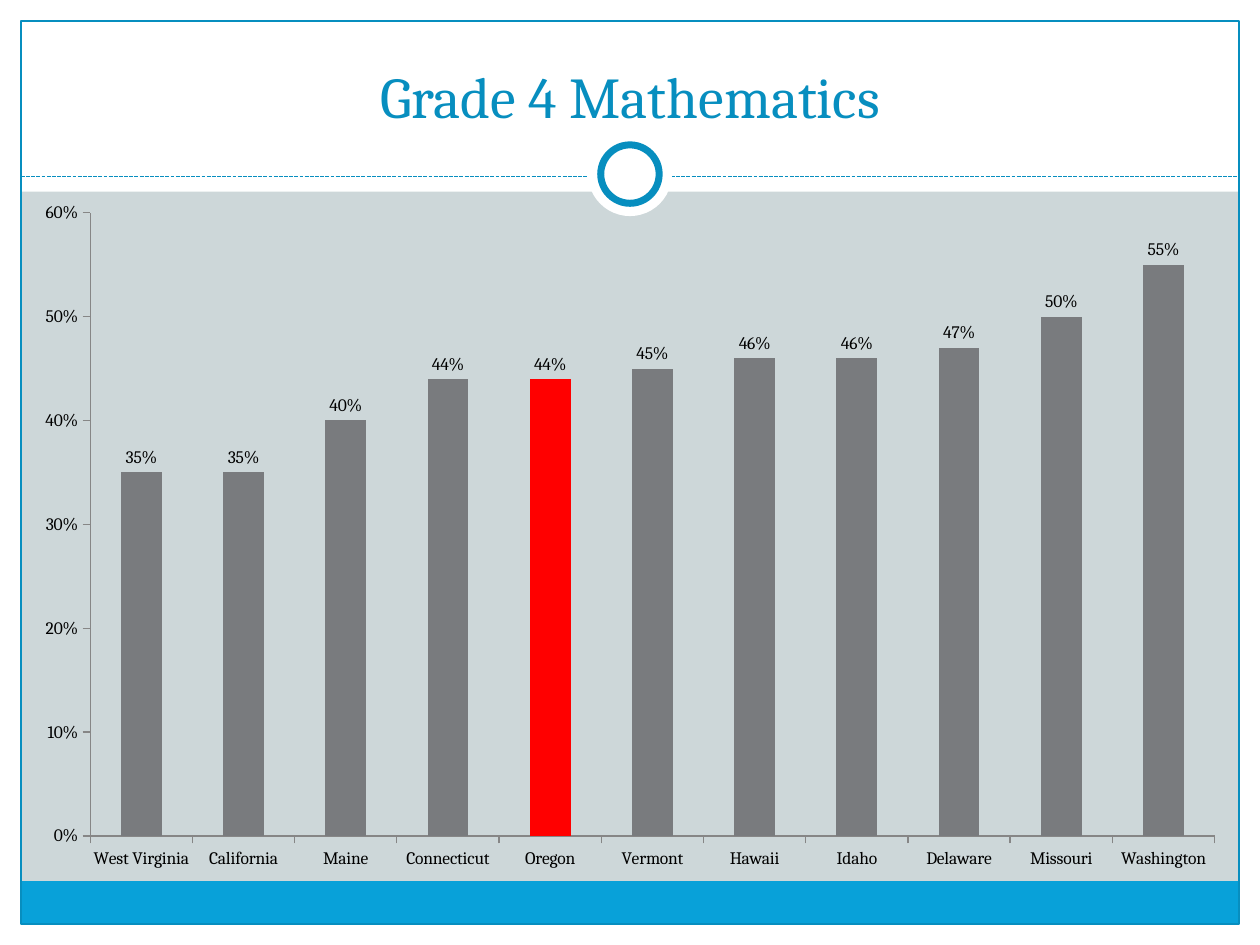
import dataclasses

import lxml.etree
import pptx
import pptx.chart.data
import pptx.dml.color
import pptx.enum.chart
import pptx.enum.dml
import pptx.enum.shapes
import pptx.enum.text
import pptx.oxml.ns
import pptx.util

Pt = pptx.util.Pt
RGB = pptx.dml.color.RGBColor.from_string
qn = pptx.oxml.ns.qn
SHAPE = pptx.enum.shapes.MSO_SHAPE


@dataclasses.dataclass(frozen=True)
class Theme:
    background = RGB("CDD7D9")
    white = RGB("FFFFFF")
    accent = RGB("078EBF")
    footer = RGB("08A1D9")
    bar = RGB("797B7E")
    highlight = RGB("FF0000")
    axis = RGB("868686")
    text = RGB("000000")
    font = "Cambria"
    title_size = Pt(33)
    chart_size = Pt(10)


theme = Theme()
WIDTH, HEIGHT, MARGIN = 720, 540, 12

presentation = pptx.Presentation()
presentation.slide_width = Pt(WIDTH)
presentation.slide_height = Pt(HEIGHT)
slide = presentation.slides.add_slide(presentation.slide_layouts[5])
slide.background.fill.solid()
slide.background.fill.fore_color.rgb = theme.background


def add_shape(kind, left, top, width, height, fill=None, line_width=None):
    shape = slide.shapes.add_shape(kind, Pt(left), Pt(top), Pt(width), Pt(height))
    shape.shadow.inherit = False
    if fill is None:
        shape.fill.background()
    else:
        shape.fill.solid()
        shape.fill.fore_color.rgb = fill
    if line_width is None:
        shape.line.fill.background()
    else:
        shape.line.color.rgb = theme.accent
        shape.line.width = Pt(line_width)
    return shape


# White margins and header, footer bar, frame
for left, top, width, height in (
    (0, HEIGHT - MARGIN, WIDTH, MARGIN),
    (0, 0, WIDTH, 109.5),
    (0, 0, MARGIN, HEIGHT),
    (WIDTH - MARGIN, 0, MARGIN, HEIGHT),
):
    add_shape(SHAPE.RECTANGLE, left, top, width, height, theme.white)
inner_width = WIDTH - 2 * MARGIN
add_shape(SHAPE.RECTANGLE, MARGIN, 503.5, inner_width, 24.5, theme.footer)
add_shape(SHAPE.RECTANGLE, MARGIN, MARGIN, inner_width, HEIGHT - 2 * MARGIN, line_width=0.75)

# Dashed divider
divider = slide.shapes.add_connector(
    pptx.enum.shapes.MSO_CONNECTOR.STRAIGHT,
    Pt(MARGIN), Pt(100.8), Pt(WIDTH - MARGIN), Pt(100.8),
)
divider.line.color.rgb = theme.accent
divider.line.width = Pt(0.75)
divider.line.dash_style = pptx.enum.dml.MSO_LINE.SQUARE_DOT
lxml.etree.SubElement(divider._element.spPr, qn("a:effectLst"))

# Ring centred on the divider
for diameter, line_width in ((48, None), (33.4, 4)):
    add_shape(SHAPE.OVAL, (WIDTH - diameter) / 2, 99.5 - diameter / 2,
              diameter, diameter, theme.white, line_width)

# Title, brought in front of the header band
title = slide.shapes.title
title.left, title.top, title.width, title.height = Pt(24), Pt(18), Pt(672), Pt(60)
slide.shapes._spTree.append(title._element)
title.text_frame.text = "Grade 4 Mathematics"
title.text_frame.vertical_anchor = pptx.enum.text.MSO_ANCHOR.BOTTOM
title.text_frame.auto_size = pptx.enum.text.MSO_AUTO_SIZE.NONE
paragraph = title.text_frame.paragraphs[0]
paragraph.alignment = pptx.enum.text.PP_ALIGN.CENTER
run = paragraph.runs[0]
run.font.name = theme.font
run.font.size = theme.title_size
run.font.color.rgb = theme.accent

# Column chart by state
results = {
    "West Virginia": 0.35, "California": 0.35, "Maine": 0.40, "Connecticut": 0.44,
    "Oregon": 0.44, "Vermont": 0.45, "Hawaii": 0.46, "Idaho": 0.46,
    "Delaware": 0.47, "Missouri": 0.50, "Washington": 0.55,
}
chart_data = pptx.chart.data.CategoryChartData()
chart_data.categories = list(results)
chart_data.add_series("Series 1", list(results.values()))
chart = slide.shapes.add_chart(
    pptx.enum.chart.XL_CHART_TYPE.COLUMN_CLUSTERED,
    Pt(MARGIN), Pt(108), Pt(inner_width), Pt(396), chart_data,
).chart
chart.has_legend = False
chart.has_title = False
chart.font.name = theme.font
chart.font.size = theme.chart_size
chart.font.color.rgb = theme.text

# Axes
for axis in (chart.category_axis, chart.value_axis):
    axis.has_major_gridlines = False
    axis.major_tick_mark = pptx.enum.chart.XL_TICK_MARK.OUTSIDE
    axis.format.line.color.rgb = theme.axis
    axis.format.line.width = Pt(0.75)
value_axis = chart.value_axis
value_axis.minimum_scale = 0
value_axis.maximum_scale = 0.6
value_axis.major_unit = 0.1
value_axis.tick_labels.number_format = "0%"
value_axis.tick_labels.number_format_is_linked = False

# Columns, with Oregon highlighted
plot = chart.plots[0]
plot.vary_by_categories = False
plot.gap_width = 150
series = plot.series[0]
oregon = series.points[list(results).index("Oregon")]
for item, color in ((series, theme.bar), (oregon, theme.highlight)):
    item.format.fill.solid()
    item.format.fill.fore_color.rgb = color

# Value labels
labels = series.data_labels
labels.show_value = True
labels.number_format = "0%"
labels.number_format_is_linked = False
labels.position = pptx.enum.chart.XL_LABEL_POSITION.OUTSIDE_END
labels.font.name = theme.font
labels.font.size = theme.chart_size
labels.font.color.rgb = theme.text

presentation.save("out.pptx")
